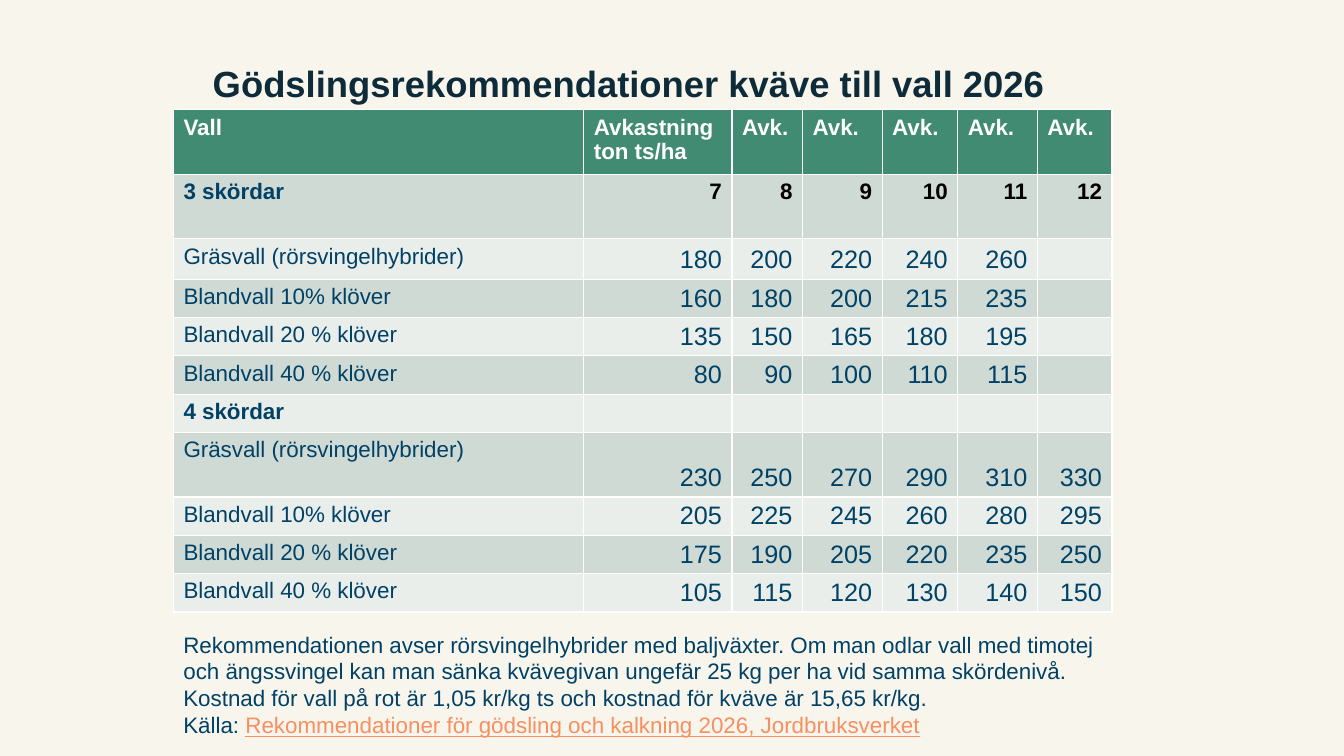
from pptx import Presentation
from pptx.dml.color import RGBColor
from pptx.enum.text import MSO_ANCHOR, MSO_AUTO_SIZE, PP_ALIGN
from pptx.util import Inches, Pt

TOP, MIDDLE, BOTTOM = MSO_ANCHOR.TOP, MSO_ANCHOR.MIDDLE, MSO_ANCHOR.BOTTOM
LEFT, RIGHT = PP_ALIGN.LEFT, PP_ALIGN.RIGHT
NO_FIT = MSO_AUTO_SIZE.NONE

CREAM = RGBColor(0xF8, 0xF5, 0xED)
DARK = RGBColor(0x0D, 0x2B, 0x38)
GREEN = RGBColor(0x41, 0x8B, 0x73)
SAGE = RGBColor(0xCF, 0xDA, 0xD5)
PALE = RGBColor(0xE9, 0xEE, 0xEB)
NAVY = RGBColor(0x00, 0x41, 0x65)
BLUE = RGBColor(0x00, 0x42, 0x66)
ORANGE = RGBColor(0xF6, 0x8F, 0x61)
WHITE = RGBColor(0xFF, 0xFF, 0xFF)
BLACK = RGBColor(0x00, 0x00, 0x00)

WIDTHS = [4.07, 1.47, 0.7, 0.79, 0.75, 0.79, 0.74]
HEIGHTS = [0.64, 0.64, 0.4, 0.37, 0.37, 0.37, 0.37, 0.64, 0.37, 0.38, 0.38]
ROWS = [
    ["Vall", "Avkastning ton ts/ha"] + ["Avk."] * 5,
    ["3 skördar", 7, 8, 9, 10, 11, 12],
    ["Gräsvall (rörsvingelhybrider)", 180, 200, 220, 240, 260, ""],
    ["Blandvall 10% klöver", 160, 180, 200, 215, 235, ""],
    ["Blandvall 20 % klöver", 135, 150, 165, 180, 195, ""],
    ["Blandvall 40 % klöver", 80, 90, 100, 110, 115, ""],
    ["4 skördar"] + [""] * 6,
    ["Gräsvall (rörsvingelhybrider)", 230, 250, 270, 290, 310, 330],
    ["Blandvall 10% klöver", 205, 225, 245, 260, 280, 295],
    ["Blandvall 20 % klöver", 175, 190, 205, 220, 235, 250],
    ["Blandvall 40 % klöver", 105, 115, 120, 130, 140, 150],
]
NOTES = [
    ["Rekommendationen avser rörsvingelhybrider med baljväxter. Om man odlar "
     "vall med timotej och ängssvingel kan man sänka kvävegivan ungefär 25 kg "
     "per ha vid samma skördenivå."],
    ["Kostnad för vall på rot är 1,05 kr/kg ts och kostnad för kväve är 15,65 kr/kg."],
    ["Källa: ", "Rekommendationer för gödsling och kalkning 2026, Jordbruksverket"],
]


class Deck:
    font = "Arial"

    def __init__(self):
        self.file = Presentation()
        self.file.slide_width = Inches(13.33)
        self.file.slide_height = Inches(7.5)
        self.slide = self.file.slides.add_slide(self.file.slide_layouts[5])
        fill = self.slide.background.fill
        fill.solid()
        fill.fore_color.rgb = CREAM

    def style(self, para, size, color, bold=False, align=LEFT):
        para.alignment = align
        font = para.font
        font.name = self.font
        font.size = Pt(size)
        font.bold = bold
        font.color.rgb = color

    def title(self, text, left, top, width, height):
        box = self.slide.shapes.title
        box.left, box.top = Inches(left), Inches(top)
        box.width, box.height = Inches(width), Inches(height)
        frame = box.text_frame
        frame.text = text
        frame.word_wrap = True
        frame.auto_size = NO_FIT
        frame.vertical_anchor = BOTTOM
        para = frame.paragraphs[0]
        para.line_spacing = 0.9
        self.style(para, 26, DARK, True)

    def cell(self, cell, value, row, col):
        cell.fill.solid()
        cell.fill.fore_color.rgb = GREEN if row == 0 else SAGE if row % 2 else PALE
        cell.text = str(value)
        para = cell.text_frame.paragraphs[0]
        if row == 0:
            self.style(para, 16, WHITE, True)
        elif col == 0:
            self.style(para, 16, NAVY, "skördar" in value)
        elif row == 1:
            self.style(para, 16, BLACK, True, RIGHT)
        else:
            self.style(para, 18, BLUE, align=RIGHT)
            cell.vertical_anchor = BOTTOM

    def table(self, rows, left, top):
        grid = self.slide.shapes.add_table(
            len(rows), len(WIDTHS), Inches(left), Inches(top),
            Inches(sum(WIDTHS)), Inches(sum(HEIGHTS))).table
        grid.horz_banding = False
        for col, width in zip(grid.columns, WIDTHS):
            col.width = Inches(width)
        for line, height in zip(grid.rows, HEIGHTS):
            line.height = Inches(height)
        for row, values in enumerate(rows):
            for col, value in enumerate(values):
                self.cell(grid.cell(row, col), value, row, col)

    def notes(self, lines, left, top, width, height):
        box = self.slide.shapes.add_textbox(
            Inches(left), Inches(top), Inches(width), Inches(height))
        frame = box.text_frame
        frame.word_wrap = True
        frame.vertical_anchor = MIDDLE
        for index, (text, *link) in enumerate(lines):
            para = frame.add_paragraph() if index else frame.paragraphs[0]
            self.style(para, 16, NAVY)
            para.add_run().text = text
            for source in link:
                run = para.add_run()
                run.text = source
                run.font.color.rgb = ORANGE
                run.font.underline = True


def main():
    deck = Deck()
    deck.title("Gödslingsrekommendationer kväve till vall 2026", 2.01, 0.51, 8.72, 0.59)
    deck.table(ROWS, 1.72, 1.09)
    deck.notes(NOTES, 1.72, 6.21, 9.31, 1.16)
    deck.file.save("out.pptx")


if __name__ == "__main__":
    main()
